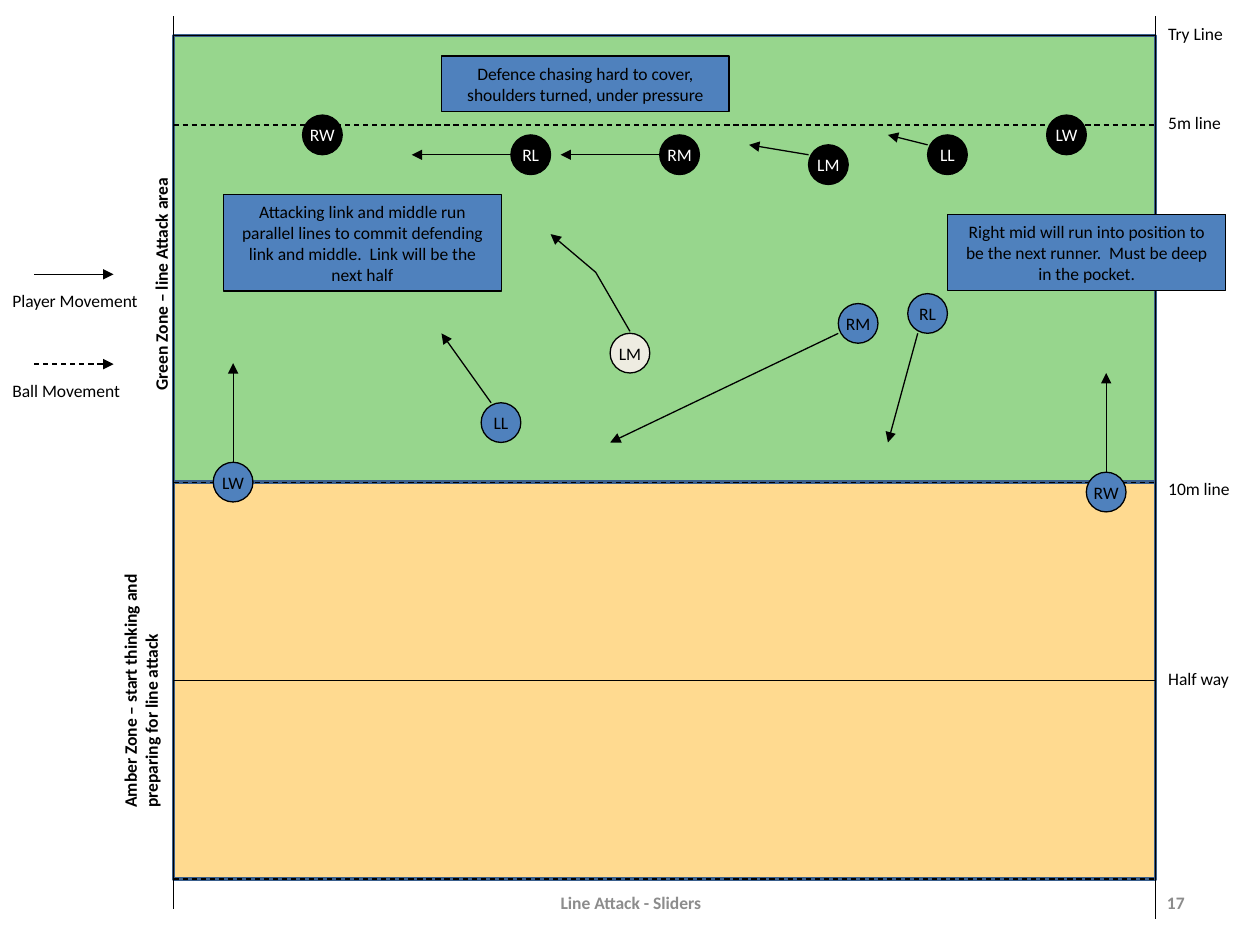
from lxml import etree
from pptx import Presentation
from pptx.dml.color import RGBColor
from pptx.enum.dml import MSO_LINE
from pptx.enum.shapes import MSO_CONNECTOR, MSO_SHAPE
from pptx.enum.text import MSO_ANCHOR, PP_ALIGN
from pptx.oxml.ns import qn
from pptx.util import Cm, Pt

STRAIGHT = MSO_CONNECTOR.STRAIGHT
RECT, OVAL = MSO_SHAPE.RECTANGLE, MSO_SHAPE.OVAL
DASH = MSO_LINE.DASH
TOP, MIDDLE = MSO_ANCHOR.TOP, MSO_ANCHOR.MIDDLE
LEFT, CENTER, RIGHT = PP_ALIGN.LEFT, PP_ALIGN.CENTER, PP_ALIGN.RIGHT

THEME = {
    "black": RGBColor(0x00, 0x00, 0x00),
    "white": RGBColor(0xFF, 0xFF, 0xFF),
    "blue": RGBColor(0x4F, 0x81, 0xBD),
    "navy": RGBColor(0x3A, 0x5F, 0x8C),
    "cream": RGBColor(0xEE, 0xEC, 0xE1),
    "green": RGBColor(0x74, 0xC8, 0x66),
    "amber": RGBColor(0xFF, 0xCC, 0x66),
    "grey": RGBColor(0x8C, 0x8C, 0x8C),
    "font": "Calibri",
    "size": Pt(10),
    "thin": Pt(0.75),
    "border": Pt(2),
}

prs = Presentation()
prs.slide_width, prs.slide_height = Cm(25.4), Cm(19.05)
s = prs.slides.add_slide(prs.slide_layouts[6])


def add_line(x1, y1, x2, y2, dashed=False, arrow=False):
    c = s.shapes.add_connector(STRAIGHT, Cm(x1), Cm(y1), Cm(x2), Cm(y2))
    c.line.color.rgb = THEME["black"]
    c.line.width = THEME["thin"]
    if dashed:
        c.line.dash_style = DASH
    if arrow:
        etree.SubElement(c.line._get_or_add_ln(), qn("a:tailEnd"), type="triangle")
    etree.SubElement(c._element.spPr, qn("a:effectLst"))


def add_text(box, text, shape=None, fill=None, color="black", align=LEFT,
             anchor=TOP, bold=False, wrap=True, rotation=0):
    left, top, width, height = [Cm(v) for v in box]
    if shape is None:
        sp = s.shapes.add_textbox(left, top, width, height)
    else:
        sp = s.shapes.add_shape(shape, left, top, width, height)
        sp.shadow.inherit = False
        sp.fill.solid()
        sp.fill.fore_color.rgb = THEME[fill]
        sp.line.color.rgb = THEME["black"]
        sp.line.width = THEME["thin"]
    sp.rotation = rotation
    tf = sp.text_frame
    tf.word_wrap = wrap
    tf.vertical_anchor = anchor
    p = tf.paragraphs[0]
    p.text = text
    p.alignment = align
    p.font.name = THEME["font"]
    p.font.size = THEME["size"]
    p.font.bold = bold
    p.font.color.rgb = THEME[color]


x_left, x_right = 3.5, 23.3
y_try, y_five, y_ten, y_half, y_end = 0.72, 2.52, 9.72, 13.72, 17.72

zones = [("amber", y_ten, y_end, 72), ("green", y_try, y_ten, 74)]
for color, top, bottom, opacity in zones:
    sp = s.shapes.add_shape(RECT, Cm(x_left), Cm(top), Cm(x_right - x_left), Cm(bottom - top))
    sp.shadow.inherit = False
    sp.fill.solid()
    sp.fill.fore_color.rgb = THEME[color]
    clr = sp._element.spPr.find(qn("a:solidFill"))[0]
    etree.SubElement(clr, qn("a:alpha"), val=str(opacity * 1000))
    sp.line.color.rgb = THEME["navy"]
    sp.line.width = THEME["border"]

for x, bottom in [(x_left, 18.33), (x_right, 18.52)]:
    add_line(x, 0.33, x, bottom)
for y, dashed in [(y_try, False), (y_five, True), (y_ten, True), (y_half, False), (y_end, True)]:
    add_line(x_left, y, x_right, y, dashed=dashed)

players = [
    ("LW", 4.3, 9.32, "blue", "black"),
    ("LM", 12.3, 6.72, "cream", "black"),
    ("RM", 16.9, 6.12, "blue", "black"),
    ("LL", 9.7, 8.12, "blue", "black"),
    ("RL", 18.3, 5.92, "blue", "black"),
    ("RW", 21.9, 9.52, "blue", "black"),
    ("LW", 21.1, 2.32, "black", "white"),
    ("LL", 18.7, 2.72, "black", "white"),
    ("LM", 16.3, 2.92, "black", "white"),
    ("RM", 13.3, 2.72, "black", "white"),
    ("RL", 10.3, 2.72, "black", "white"),
    ("RW", 6.1, 2.32, "black", "white"),
]
for name, x, y, fill, color in players:
    add_text((x, y, 0.8, 0.8), name, OVAL, fill, color, CENTER, MIDDLE, wrap=False)

runs = [
    (4.7, 9.32, 4.7, 7.32),
    (22.3, 9.52, 22.3, 7.52),
    (16.9, 6.72, 12.3, 8.92),
    (18.5, 6.72, 17.9, 8.92),
    (9.9, 8.12, 8.9, 6.72),
    (13.3, 3.12, 11.3, 3.12),
    (10.5, 3.12, 8.3, 3.12),
    (16.3, 3.12, 15.1, 2.92),
    (18.7, 2.92, 17.9, 2.72),
]
for run in runs:
    add_line(*run, arrow=True)

fb = s.shapes.build_freeform(Cm(12.7), Cm(6.68))
fb.add_line_segments([(Cm(12.01), Cm(5.49)), (Cm(11.1), Cm(4.72))], close=False)
sp = fb.convert_to_shape()
sp.shadow.inherit = False
sp.fill.background()
sp.line.color.rgb = THEME["black"]
sp.line.width = THEME["thin"]
etree.SubElement(sp.line._get_or_add_ln(), qn("a:tailEnd"), type="triangle")

legend = [("Player Movement", 5.53, 3.25, False), ("Ball Movement", 7.34, 2.84, True)]
for text, y, width, dashed in legend:
    add_line(0.69, y, 2.29, y, dashed=dashed, arrow=True)
    add_text((0, y + 0.2, width, 0.68), text, wrap=False)

notes = [
    ((8.9, 1.13, 5.8, 1.12),
     "Defence chasing hard to cover, shoulders turned, under pressure"),
    ((4.5, 3.92, 5.61, 1.95),
     "Attacking link and middle run parallel lines to commit defending link and middle.  "
     "Link will be the next half"),
    ((19.1, 4.32, 5.61, 1.54),
     "Right mid will run into position to be the next runner.  Must be deep in the pocket."),
]
for box, text in notes:
    add_text(box, text, RECT, "blue", align=CENTER, anchor=MIDDLE)

line_labels = [("Try Line", 0.33, 1.8), ("5m line", 2.13, 1.65),
               ("10m line", 9.52, 1.85), ("Half way", 13.34, 1.88)]
for text, y, width in line_labels:
    add_text((x_right, y, width, 0.68), text, wrap=False)

zone_labels = [
    ((0.25, 4.78, 5.99, 0.68), "Green Zone – line Attack area"),
    ((-0.46, 12.67, 6.6, 1.12), "Amber Zone – start thinking and preparing for line attack"),
]
for box, text in zone_labels:
    add_text(box, text, bold=True, rotation=270)

footers = [((8.69, y_end, 8.05, 0.95), "Line Attack - Sliders", CENTER),
           ((18.21, y_end, 5.92, 0.95), "17", RIGHT)]
for box, text, align in footers:
    add_text(box, text, color="grey", align=align, anchor=MIDDLE, bold=True)

prs.save("out.pptx")
